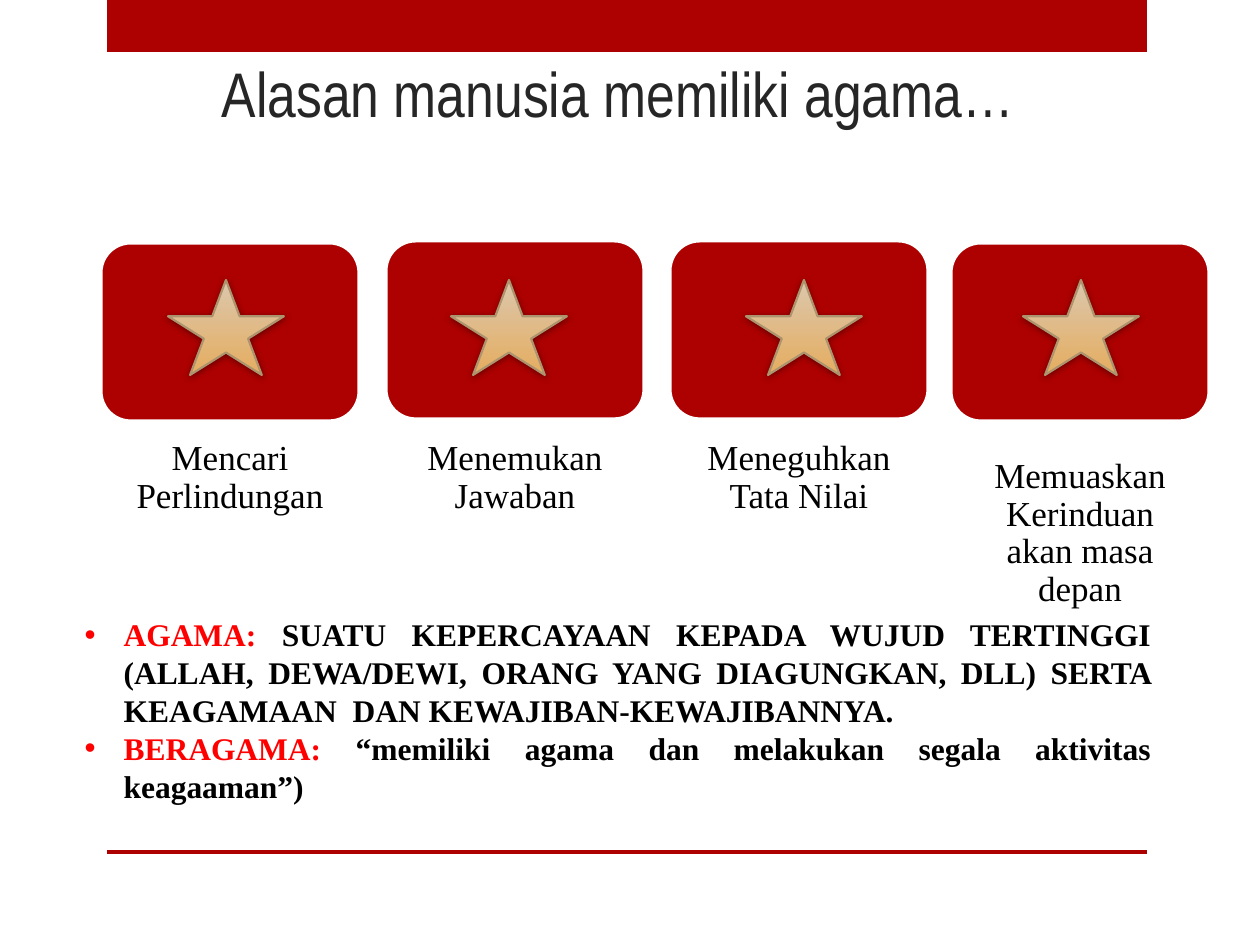
from dataclasses import dataclass
from typing import Any

from lxml.etree import SubElement
from pptx import Presentation
from pptx.dml.color import RGBColor
from pptx.enum.shapes import MSO_SHAPE
from pptx.enum.text import MSO_ANCHOR, MSO_AUTO_SIZE, PP_ALIGN
from pptx.oxml.ns import qn
from pptx.util import Emu, Pt

RED = "AD0101"
SERIF = "Times New Roman"
CARD_WIDTH, CARD_HEIGHT = 258, 178
STAR_TOP, STAR_WIDTH, STAR_HEIGHT = 280, 116, 95
LABEL_HEIGHT = 96


@dataclass(frozen=True)
class Reason:
    label: str
    left: int
    top: int
    star_left: int
    label_top: int = 420


@dataclass(frozen=True)
class Definition:
    term: str
    meaning: str


REASONS = [
    Reason("Mencari Perlindungan", 101, 243, 168),
    Reason("Menemukan Jawaban", 386, 241, 451),
    Reason("Meneguhkan Tata Nilai", 670, 241, 746),
    Reason("Memuaskan Kerinduan akan masa depan", 951, 243, 1023, 438),
]
DEFINITIONS = [
    Definition(
        "AGAMA: ",
        "SUATU KEPERCAYAAN KEPADA WUJUD TERTINGGI (ALLAH, DEWA/DEWI, ORANG YANG "
        "DIAGUNGKAN, DLL) SERTA KEAGAMAAN  DAN KEWAJIBAN-KEWAJIBANNYA.",
    ),
    Definition("BERAGAMA:", " “memiliki agama dan melakukan segala aktivitas keagaaman”)"),
]


def px(length: int) -> Emu:
    return Emu(round(length * 914400 / 126))


def color(value: str) -> RGBColor:
    return RGBColor.from_string(value)


def apply(target: Any, values: dict[str, Any]) -> None:
    for name, value in values.items():
        setattr(target, name, value)


def box(left: int, top: int, width: int, height: int) -> dict[str, Emu]:
    return dict(left=px(left), top=px(top), width=px(width), height=px(height))


def add_text(paragraph: Any, text: str, hue: str, **font: Any) -> None:
    run = paragraph.add_run()
    run.text = text
    apply(run.font, font)
    run.font.color.rgb = color(hue)


def add_block(slide: Any, kind: MSO_SHAPE, area: dict[str, Emu]) -> Any:
    block = slide.shapes.add_shape(kind, **area)
    block.shadow.inherit = False
    block.fill.solid()
    block.fill.fore_color.rgb = color(RED)
    block.line.fill.background()
    return block


def add_star(slide: Any, left: int) -> None:
    star = add_block(slide, MSO_SHAPE.STAR_5_POINT, box(left, STAR_TOP, STAR_WIDTH, STAR_HEIGHT))
    star.fill.gradient()
    star.fill.gradient_angle = 270
    for stop, hue, position in zip(star.fill.gradient_stops, ("DBC7AD", "E5AD60"), (0, 1)):
        stop.color.rgb = color(hue)
        stop.position = position
    star.line.color.rgb = color("AC956E")
    star.line.width = Pt(1.25)
    effects = star._element.spPr.find(qn("a:effectLst"))
    shadow = SubElement(
        effects, qn("a:outerShdw"), blurRad="50800", dist="12700", dir="5280000", rotWithShape="0"
    )
    shade = SubElement(shadow, qn("a:srgbClr"), val="000000")
    SubElement(shade, qn("a:alpha"), val="40000")


def add_reason(slide: Any, reason: Reason) -> None:
    area = box(reason.left, reason.top, CARD_WIDTH, CARD_HEIGHT)
    card = add_block(slide, MSO_SHAPE.ROUNDED_RECTANGLE, area)
    card.line.color.rgb = color("FFFFFF")
    card.line.width = Pt(1.75)
    add_star(slide, reason.star_left)
    area = box(reason.left, reason.label_top, CARD_WIDTH, LABEL_HEIGHT)
    frame = slide.shapes.add_textbox(**area).text_frame
    apply(frame, dict(word_wrap=True, margin_left=px(20), margin_right=px(20),
                      margin_top=px(20), margin_bottom=0))
    paragraph = frame.paragraphs[0]
    apply(paragraph, dict(alignment=PP_ALIGN.CENTER, line_spacing=0.9))
    add_text(paragraph, reason.label, "000000", name=SERIF, size=Pt(20))


def fill_title(title: Any) -> None:
    apply(title, box(98, 42, 1040, 94))
    frame = title.text_frame
    apply(frame, dict(vertical_anchor=MSO_ANCHOR.BOTTOM, auto_size=MSO_AUTO_SIZE.NONE))
    paragraph = frame.paragraphs[0]
    paragraph.alignment = PP_ALIGN.CENTER
    add_text(paragraph, "Alasan manusia memiliki agama…", "262626",
             name="Arial Narrow", size=Pt(36))


def fill_definitions(body: Any) -> None:
    apply(body, box(72, 609, 1092, 204))
    frame = body.text_frame
    frame.auto_size = MSO_AUTO_SIZE.NONE
    for index, definition in enumerate(DEFINITIONS):
        paragraph = frame.add_paragraph() if index else frame.paragraphs[0]
        apply(paragraph, dict(alignment=PP_ALIGN.JUSTIFY, space_before=Pt(0)))
        properties = paragraph._p.get_or_add_pPr()
        properties.set("marL", str(px(39)))
        properties.set("indent", str(px(-39)))
        SubElement(properties, qn("a:buFont"), typeface="Arial")
        SubElement(properties, qn("a:buChar"), char="•")
        for text, hue in ((definition.term, "FF0000"), (definition.meaning, "000000")):
            add_text(paragraph, text, hue, name=SERIF, size=Pt(18), bold=True)


def main() -> None:
    deck = Presentation()
    apply(deck, dict(slide_width=px(1260), slide_height=px(945)))
    slide = deck.slides.add_slide(deck.slide_layouts[1])
    for top, height in ((0, 52), (850, 4)):
        add_block(slide, MSO_SHAPE.RECTANGLE, box(107, top, 1040, height))
    fill_title(slide.shapes.title)
    for reason in REASONS:
        add_reason(slide, reason)
    fill_definitions(slide.placeholders[1])
    deck.save("out.pptx")


if __name__ == "__main__":
    main()
